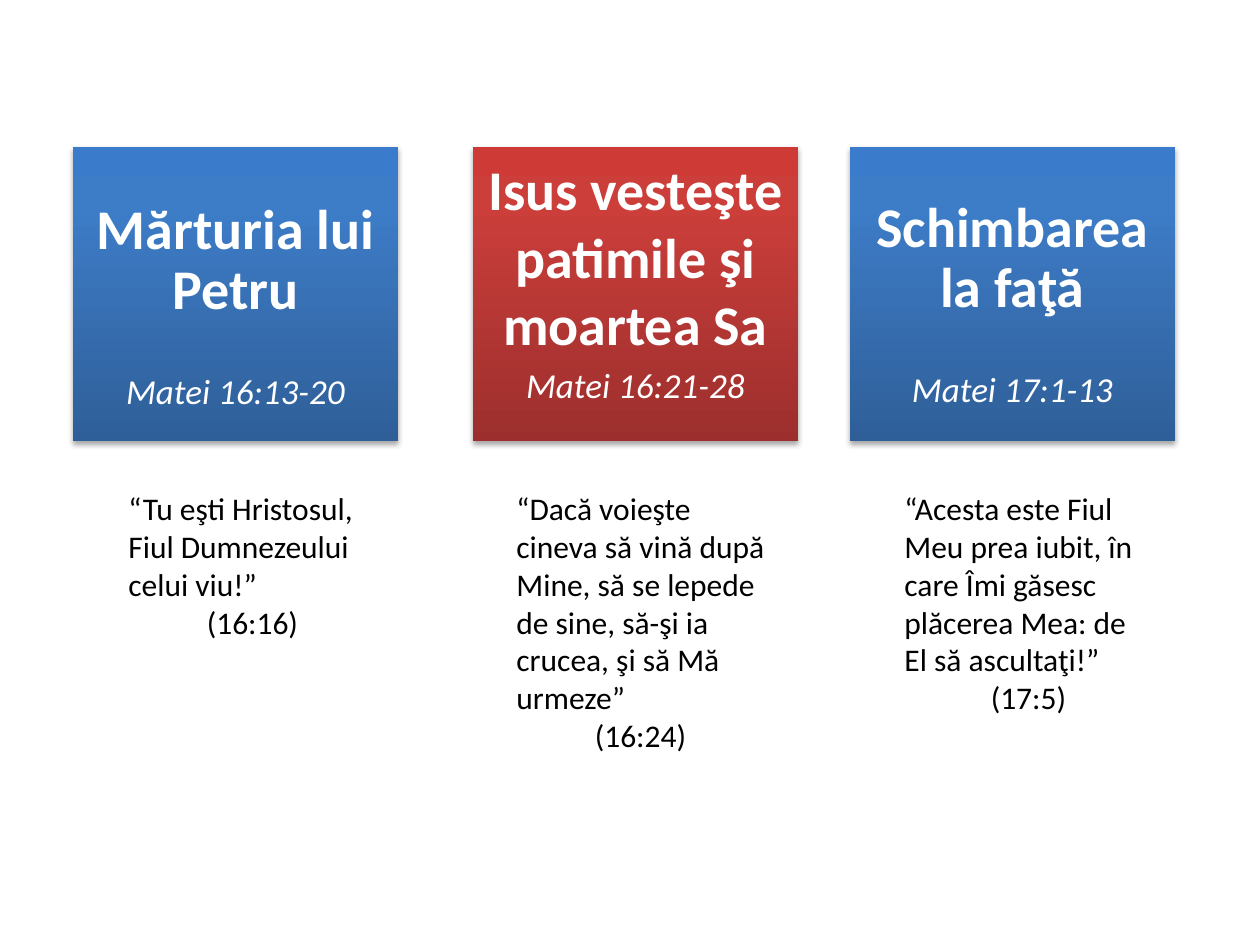
from copy import deepcopy

from lxml.etree import SubElement
from pptx import Presentation
from pptx.dml.color import RGBColor
from pptx.enum.shapes import MSO_SHAPE
from pptx.enum.text import MSO_ANCHOR, MSO_AUTO_SIZE, PP_ALIGN
from pptx.oxml.ns import qn
from pptx.util import Inches, Pt

SCALE = Inches(1) / 126  # EMU in one px

WHITE = RGBColor(0xFF, 0xFF, 0xFF)
BLACK = RGBColor(0x00, 0x00, 0x00)
BLUES = (RGBColor(0x2F, 0x5F, 0x99), RGBColor(0x3D, 0x7C, 0xC7), RGBColor(0x3A, 0x7C, 0xCB))
REDS = (RGBColor(0x9C, 0x2F, 0x2D), RGBColor(0xCB, 0x3E, 0x3A), RGBColor(0xCE, 0x3B, 0x37))

CARD_TOP, CARD_WIDTH, CARD_HEIGHT = 147, 325, 294
QUOTE_LEFT, QUOTE_STEP, QUOTE_TOP, QUOTE_WIDTH = 116, 388, 483, 273

# card left, colours, top inset, line spacing, gap above reference (pt),
# heading, reference, quote height, quote, verse
COLUMNS = [
    (73, BLUES, 54, 0.9, 30, "Mărturia lui Petru", "Matei 16:13-20",
     165, "“Tu eşti Hristosul, Fiul Dumnezeului celui viu!”", "(16:16)"),
    (473, REDS, 8, 1.0, 4, "Isus vesteşte patimile şi moartea Sa", "Matei 16:21-28",
     280, "“Dacă voieşte cineva să vină după Mine, să se lepede de sine, "
     "să-şi ia crucea, şi să Mă urmeze”", "(16:24)"),
    (850, BLUES, 52, 0.9, 30, "Schimbarea la faţă", "Matei 17:1-13",
     242, "“Acesta este Fiul Meu prea iubit, în care Îmi găsesc plăcerea Mea: "
     "de El să ascultaţi!”", "(17:5)"),
]


def px(*lengths):
    """Turn px lengths into EMU."""
    return [round(length * SCALE) for length in lengths]


def write(para, text, size=18, color=BLACK, bold=False, italic=False,
          align=PP_ALIGN.LEFT, spacing=1.0, before=0):
    para.alignment = align
    para.line_spacing = spacing
    para.space_before = Pt(before)
    span = para.add_run()
    span.text = text
    span.font.name = "Calibri"
    span.font.size = Pt(size)
    span.font.bold = bold
    span.font.italic = italic
    span.font.color.rgb = color


deck = Presentation()
deck.slide_width, deck.slide_height = px(1260, 945)
page = deck.slides.add_slide(deck.slide_layouts[6])

for column, (left, colors, inset, spacing, gap, heading, reference,
             quote_height, quote, verse) in enumerate(COLUMNS):
    card = page.shapes.add_shape(
        MSO_SHAPE.RECTANGLE, *px(left, CARD_TOP, CARD_WIDTH, CARD_HEIGHT))
    card.line.fill.background()

    card.fill.gradient()
    card.fill.gradient_angle = 90
    stop_list = card.element.spPr.find(qn("a:gradFill")).find(qn("a:gsLst"))
    stop_list.append(deepcopy(stop_list[0]))
    for stop, color, position in zip(card.fill.gradient_stops, colors, (0, 0.8, 1)):
        stop.color.rgb = color
        stop.position = position

    card.shadow.inherit = False
    effects = card.element.spPr.find(qn("a:effectLst"))
    shadow = SubElement(effects, qn("a:outerShdw"), blurRad=str(Pt(3.1)),
                        dist=str(Pt(1.8)), dir="5400000", rotWithShape="0")
    shadow_color = SubElement(shadow, qn("a:srgbClr"), val=str(BLACK))
    SubElement(shadow_color, qn("a:alpha"), val="35000")

    frame = card.text_frame
    frame.word_wrap = True
    frame.vertical_anchor = MSO_ANCHOR.TOP
    frame.margin_top = px(inset)[0]
    write(frame.paragraphs[0], heading, size=32, color=WHITE, bold=True,
          align=PP_ALIGN.CENTER, spacing=spacing)
    write(frame.add_paragraph(), reference, size=20, color=WHITE, italic=True,
          align=PP_ALIGN.CENTER, spacing=spacing, before=gap)

    box = page.shapes.add_textbox(
        *px(QUOTE_LEFT + column * QUOTE_STEP, QUOTE_TOP, QUOTE_WIDTH, quote_height))
    box.text_frame.word_wrap = True
    box.text_frame.auto_size = MSO_AUTO_SIZE.SHAPE_TO_FIT_TEXT
    write(box.text_frame.paragraphs[0], quote)
    write(box.text_frame.add_paragraph(), verse, align=PP_ALIGN.CENTER)

deck.save("out.pptx")
